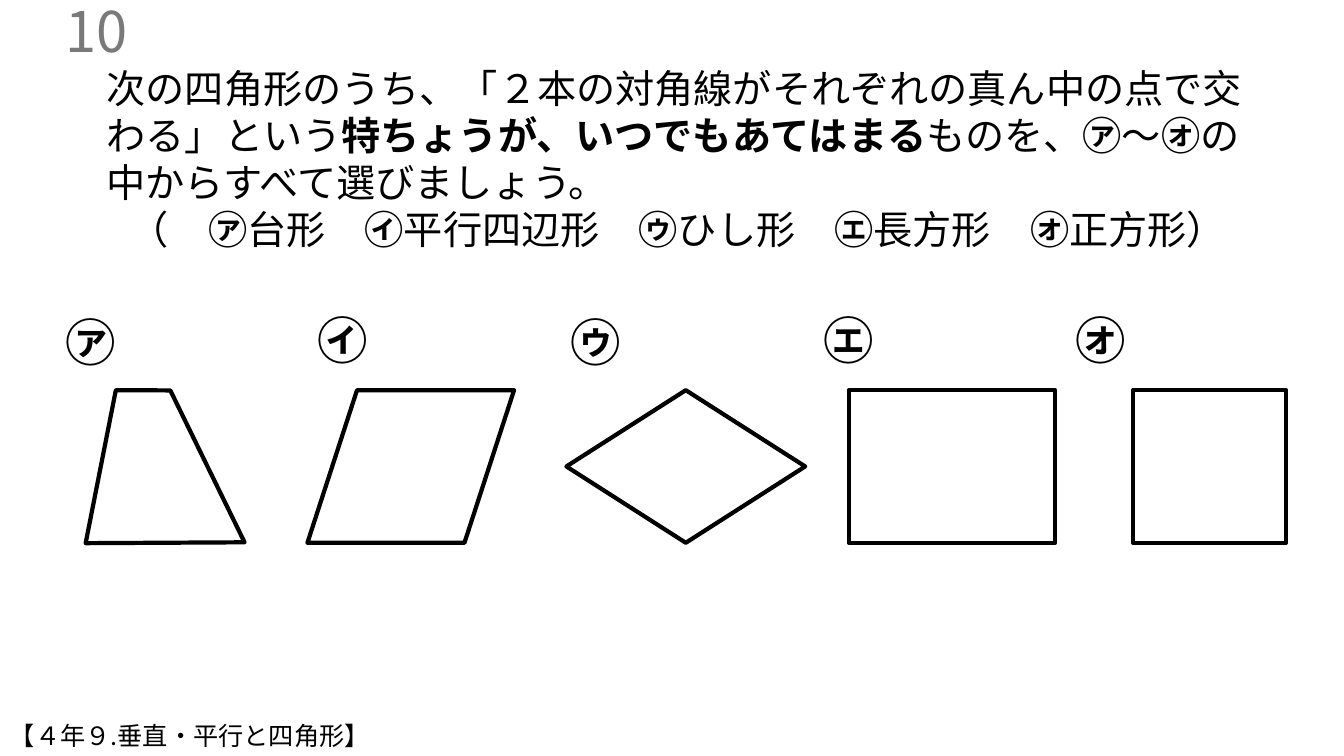
from dataclasses import dataclass

from lxml.etree import SubElement
from pptx import Presentation
from pptx.dml.color import RGBColor
from pptx.enum.shapes import MSO_SHAPE as Preset
from pptx.enum.text import MSO_ANCHOR as Anchor, MSO_AUTO_SIZE as AutoSize, PP_ALIGN as Align
from pptx.oxml.ns import qn
from pptx.util import Pt


@dataclass(frozen=True)
class Theme:
    """Fonts, colours and sizes of the worksheet."""
    font: str = "Noto Sans CJK JP"
    ink: RGBColor = RGBColor(0, 0, 0)
    grey: RGBColor = RGBColor(0x79, 0x79, 0x79)
    number: int = 40
    label: int = 36
    question: int = 28
    unit: int = 18
    outline: int = 3


class Worksheet:
    """Draws the parts of a question on one slide."""

    def __init__(self, slide, theme):
        self.shapes = slide.shapes
        self.theme = theme

    def text(self, box, paragraphs, size, color=None, anchor=Anchor.TOP, bold_first=False):
        """Adds paragraphs whose bold parts stand between asterisks."""
        frame = self.shapes.add_textbox(*map(Pt, box)).text_frame
        frame.word_wrap = True
        frame.auto_size = AutoSize.NONE
        frame.vertical_anchor = anchor
        for index, (content, align) in enumerate(paragraphs):
            paragraph = frame.add_paragraph() if index else frame.paragraphs[0]
            paragraph.alignment = align
            font = paragraph.font
            font.size = Pt(size)
            font.name = self.theme.font
            font.color.rgb = color or self.theme.ink
            defaults = paragraph._p.pPr.find(qn("a:defRPr"))
            SubElement(defaults, qn("a:ea"), typeface=self.theme.font)
            for position, part in enumerate(content.split("*")):
                if part:
                    run = paragraph.add_run()
                    run.text = part
                    if position % 2:
                        run.font.bold = True

    def outline(self, figure):
        """Leaves a figure unfilled with a black outline."""
        figure.shadow.inherit = False
        figure.fill.background()
        figure.line.color.rgb = self.theme.ink
        figure.line.width = Pt(self.theme.outline)

    def preset(self, kind, box, slant=None):
        """Adds an outlined preset figure."""
        figure = self.shapes.add_shape(kind, *map(Pt, box))
        if slant is not None:
            figure.adjustments[0] = slant
        self.outline(figure)

    def polygon(self, corners):
        """Adds an outlined polygon through the corners."""
        start, *others = [(Pt(x), Pt(y)) for x, y in corners]
        builder = self.shapes.build_freeform(*start)
        builder.add_line_segments(others, close=True)
        self.outline(builder.convert_to_shape())


QUESTION = (
    "次の四角形のうち、「２本の対角線がそれぞれの真ん中の点で交わる」という"
    "*特ちょうが、いつでもあてはまる*ものを、*㋐*～*㋔*の中からすべて選びましょう。"
)
CHOICES = "（　*㋐*台形　*㋑*平行四辺形　*㋒*ひし形　*㋓*長方形　*㋔*正方形）"
LABELS = [("㋐", 219), ("㋑", 217.5), ("㋒", 219), ("㋓", 217.5), ("㋔", 217.5)]
LABEL_LEFT, LABEL_PITCH = 39.6, 180.4
FIGURE_TOP, FIGURE_HEIGHT = 278.7, 109
TRAPEZOID = [(82.8, 278.7), (61.2, 388), (174.7, 387.4), (121.7, 278.9)]
FIGURES = [
    (Preset.PARALLELOGRAM, 219.6, 147.6, 0.325),
    (Preset.DIAMOND, 404.6, 170.6, None),
    (Preset.RECTANGLE, 606.2, 147.6, None),
    (Preset.RECTANGLE, 809.3, 109.4, None),
]


def main():
    """Builds and saves the worksheet."""
    deck = Presentation()
    deck.slide_width, deck.slide_height = Pt(960), Pt(540)
    theme = Theme()
    sheet = Worksheet(deck.slides.add_slide(deck.slide_layouts[6]), theme)

    sheet.text((69.1, 42.5, 830.2, 143.3),
               [(QUESTION, Align.LEFT), (CHOICES, Align.CENTER)], theme.question)
    sheet.text((0, 7.2, 98.6, 28.8), [("10", Align.RIGHT)],
               theme.number, theme.grey, Anchor.MIDDLE)
    for kind, left, width, slant in FIGURES:
        sheet.preset(kind, (left, FIGURE_TOP, width, FIGURE_HEIGHT), slant)
    sheet.polygon(TRAPEZOID)
    for column, (label, top) in enumerate(LABELS):
        left = LABEL_LEFT + column * LABEL_PITCH
        sheet.text((left, top, 59, 51.1), [(f"*{label}*", Align.LEFT)], theme.label)
    sheet.text((0, 511.2, 539.3, 28.8),
               [("【４年９.垂直・平行と四角形】", Align.LEFT)], theme.unit)
    deck.save("out.pptx")


if __name__ == "__main__":
    main()
